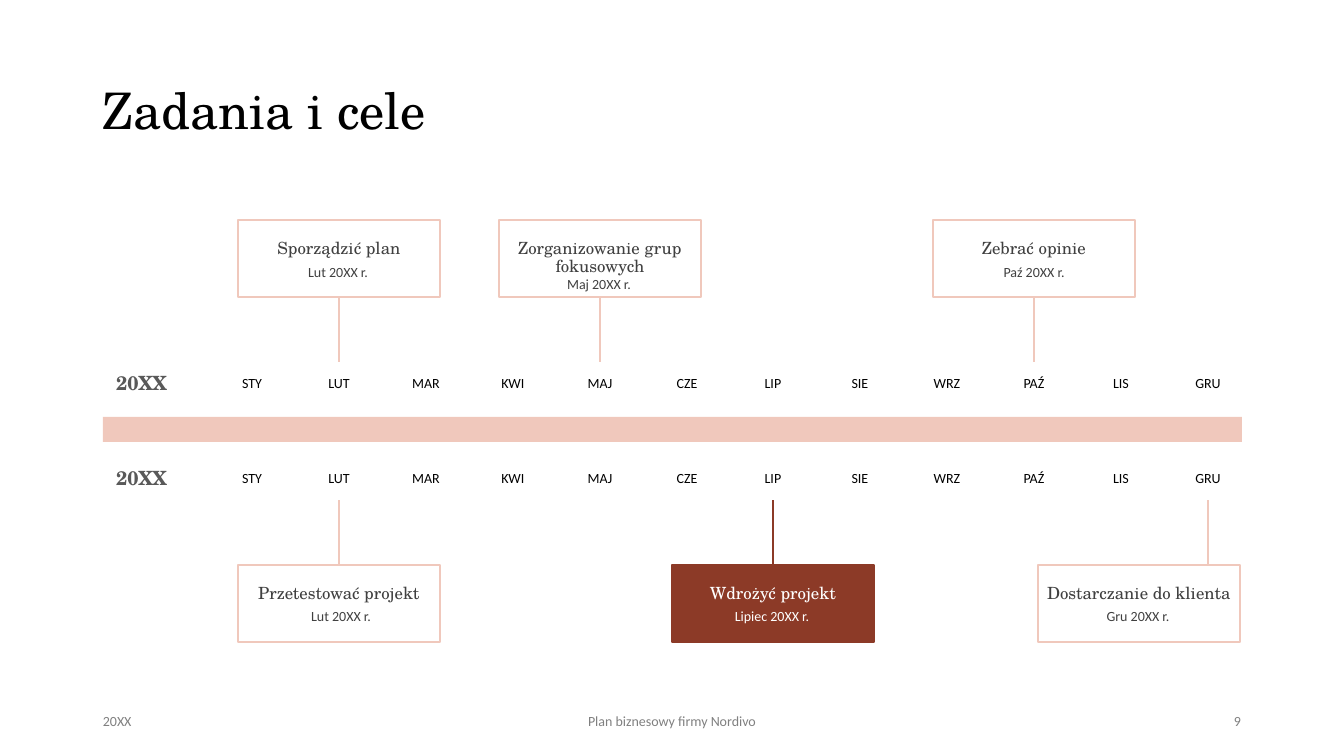
from dataclasses import dataclass

from lxml.etree import SubElement
from pptx import Presentation
from pptx.dml.color import RGBColor
from pptx.enum.shapes import MSO_CONNECTOR, MSO_SHAPE
from pptx.enum.text import MSO_ANCHOR, PP_ALIGN
from pptx.oxml.ns import qn
from pptx.shapes.autoshape import Shape
from pptx.slide import Slide
from pptx.util import Emu, Pt


@dataclass(frozen=True)
class Theme:
    """Fonts, colours and type sizes of the slide."""
    serif: str = "TeX Gyre Schola"
    sans: str = "Calibri"
    black: str = "000000"
    dark: str = "404040"
    year: str = "595959"
    footer: str = "808080"
    white: str = "FFFFFF"
    blush: str = "F0C8BC"
    brick: str = "8C3A27"
    title_size: int = 36
    year_size: int = 14
    card_size: int = 12
    small_size: int = 10


@dataclass(frozen=True)
class Box:
    """A rectangle in px."""
    left: int
    top: int
    width: int
    height: int


@dataclass(frozen=True)
class TextStyle:
    """The look of one line of text."""
    font: str
    size: int
    color: str
    align: PP_ALIGN = PP_ALIGN.CENTER
    bold: bool = False
    spacing: float = 0.9


@dataclass(frozen=True)
class Milestone:
    """A task card tied to a month of the timeline."""
    title: str
    date: str
    month: int
    above: bool
    date_top: int
    date_shift: int = 0
    highlighted: bool = False


THEME = Theme()
MONTHS = ("STY", "LUT", "MAR", "KWI", "MAJ", "CZE",
          "LIP", "SIE", "WRZ", "PAŹ", "LIS", "GRU")
FIRST_MONTH, LAST_MONTH = 252, 1208
CARD_WIDTH, CARD_HEIGHT = 202, 77
CARD_TOP_ABOVE, CARD_TOP_BELOW = 220, 565
RIGHT_EDGE = 1240
STEM_LENGTH = 65
BAR = Box(103, 417, 1139, 25)
MILESTONES = (
    Milestone("Sporządzić plan", "Lut 20XX r.", 1, True, 265, -1),
    Milestone("Zorganizowanie grup fokusowych", "Maj 20XX r.", 4, True, 277, -1),
    Milestone("Zebrać opinie", "Paź 20XX r.", 9, True, 265),
    Milestone("Przetestować projekt", "Lut 20XX r.", 1, False, 609, 2),
    Milestone("Wdrożyć projekt", "Lipiec 20XX r.", 6, False, 609, -1, True),
    Milestone("Dostarczanie do klienta", "Gru 20XX r.", 11, False, 609, -1),
)
MONTH_STYLE = TextStyle(THEME.sans, THEME.small_size, THEME.black)
YEAR_STYLE = TextStyle(THEME.serif, THEME.year_size, THEME.year, bold=True)
TITLE_STYLE = TextStyle(THEME.serif, THEME.title_size, THEME.black, PP_ALIGN.LEFT)
FOOTERS = (
    ("20XX", Box(93, 701, 302, 40), PP_ALIGN.LEFT),
    ("Plan biznesowy firmy Nordivo", Box(445, 701, 454, 40), PP_ALIGN.CENTER),
    ("9", Box(949, 701, 302, 40), PP_ALIGN.RIGHT),
)


def px(length: int) -> Emu:
    """Convert px to EMU."""
    return Emu(round(length * 914400 / 100.8))


def place(box: Box) -> tuple[Emu, Emu, Emu, Emu]:
    """Return a box as EMU arguments."""
    return px(box.left), px(box.top), px(box.width), px(box.height)


def month_center(month: int) -> int:
    """Return the centre of a month column."""
    return round(FIRST_MONTH + month * (LAST_MONTH - FIRST_MONTH) / (len(MONTHS) - 1))


def write(shape: Shape, text: str, style: TextStyle,
          anchor: MSO_ANCHOR = MSO_ANCHOR.TOP) -> None:
    """Put styled text into a shape."""
    frame = shape.text_frame
    frame.text = text
    frame.word_wrap = True
    frame.vertical_anchor = anchor
    paragraph = frame.paragraphs[0]
    paragraph.alignment = style.align
    paragraph.line_spacing = style.spacing
    font = paragraph.runs[0].font
    font.name, font.size, font.bold = style.font, Pt(style.size), style.bold
    font.color.rgb = RGBColor.from_string(style.color)


def set_insets(shape: Shape, top: int) -> None:
    """Clear the text insets of a shape except the top one."""
    frame = shape.text_frame
    frame.margin_left = frame.margin_right = frame.margin_bottom = 0
    frame.margin_top = px(top)


def add_label(slide: Slide, box: Box, text: str, style: TextStyle,
              anchor: MSO_ANCHOR = MSO_ANCHOR.TOP) -> Shape:
    """Add a text box."""
    label = slide.shapes.add_textbox(*place(box))
    write(label, text, style, anchor)
    return label


def add_rectangle(slide: Slide, box: Box, fill: str | None, line: str | None) -> Shape:
    """Add a flat rectangle with optional fill and outline."""
    shape = slide.shapes.add_shape(MSO_SHAPE.RECTANGLE, *place(box))
    shape.shadow.inherit = False
    if fill:
        shape.fill.solid()
        shape.fill.fore_color.rgb = RGBColor.from_string(fill)
    else:
        shape.fill.background()
    if line:
        shape.line.color.rgb = RGBColor.from_string(line)
        shape.line.width = Pt(1)
    else:
        shape.line.fill.background()
    return shape


def add_milestone(slide: Slide, milestone: Milestone) -> None:
    """Add a card, its date and the stem to its month."""
    stem_x = month_center(milestone.month)
    left = min(stem_x - CARD_WIDTH // 2, RIGHT_EDGE - CARD_WIDTH)
    top = CARD_TOP_ABOVE if milestone.above else CARD_TOP_BELOW
    accent = THEME.brick if milestone.highlighted else THEME.blush
    color = THEME.white if milestone.highlighted else THEME.dark
    card = add_rectangle(slide, Box(left, top, CARD_WIDTH, CARD_HEIGHT),
                         THEME.brick if milestone.highlighted else None, accent)
    write(card, milestone.title, TextStyle(THEME.serif, THEME.card_size, color))
    set_insets(card, 20)
    date_box = Box(left + 8 + milestone.date_shift, milestone.date_top, CARD_WIDTH - 16, 25)
    date = add_label(slide, date_box, milestone.date,
                     TextStyle(THEME.sans, THEME.small_size, color))
    set_insets(date, 0)

    start = top + CARD_HEIGHT if milestone.above else top
    end = start + STEM_LENGTH if milestone.above else start - STEM_LENGTH
    stem = slide.shapes.add_connector(MSO_CONNECTOR.STRAIGHT, px(stem_x), px(start),
                                      px(stem_x), px(end))
    if stem_x == left + CARD_WIDTH // 2:
        stem.begin_connect(card, 2 if milestone.above else 0)
    stem.line.color.rgb = RGBColor.from_string(accent)
    stem.line.width = Pt(1)
    SubElement(stem._element.spPr, qn("a:effectLst"))


def add_month_row(slide: Slide, top: int) -> None:
    """Add a year and its twelve months."""
    add_label(slide, Box(101, top - 12, 81, 50), "20XX", YEAR_STYLE, MSO_ANCHOR.MIDDLE)
    for index, month in enumerate(MONTHS):
        add_label(slide, Box(month_center(index) - 35, top, 70, 22), month, MONTH_STYLE)


def main() -> None:
    """Build and save the slide."""
    presentation = Presentation()
    presentation.slide_width, presentation.slide_height = px(1344), px(756)
    slide = presentation.slides.add_slide(presentation.slide_layouts[6])
    add_label(slide, Box(93, 78, 1159, 71), "Zadania i cele", TITLE_STYLE, MSO_ANCHOR.MIDDLE)
    for row_top in (371, 466):
        add_month_row(slide, row_top)
    for milestone in MILESTONES:
        add_milestone(slide, milestone)
    for text, box, align in FOOTERS:
        style = TextStyle(THEME.sans, THEME.small_size, THEME.footer, align, spacing=1.0)
        add_label(slide, box, text, style, MSO_ANCHOR.MIDDLE)
    add_rectangle(slide, BAR, THEME.blush, None)
    presentation.save("out.pptx")


if __name__ == "__main__":
    main()
